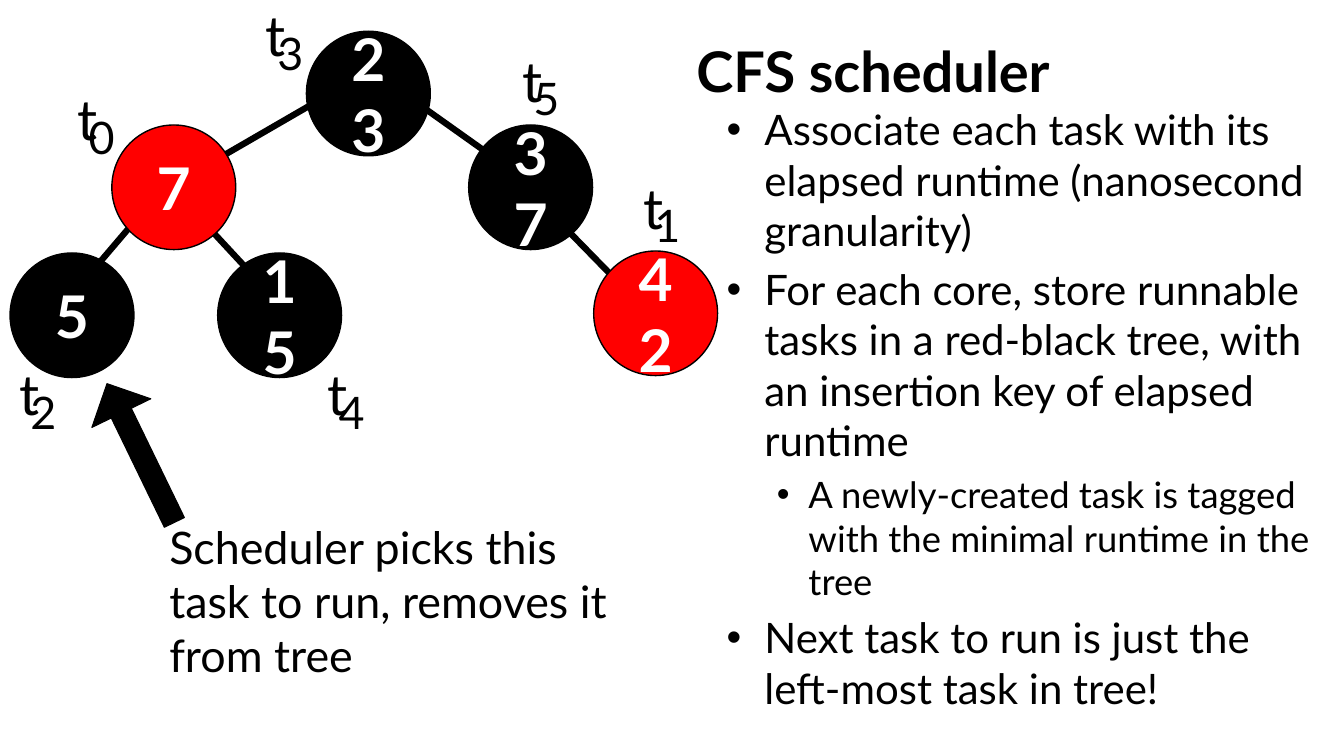
from dataclasses import dataclass

import lxml.etree
import pptx
import pptx.dml.color
import pptx.enum.shapes
import pptx.enum.text
import pptx.oxml.ns
import pptx.shapes.autoshape
import pptx.shapes.shapetree
import pptx.text.text
import pptx.util

Pt = pptx.util.Pt
RGB = pptx.dml.color.RGBColor
Align = pptx.enum.text.PP_ALIGN
AutoShape = pptx.enum.shapes.MSO_SHAPE
Shapes = pptx.shapes.shapetree.SlideShapes | pptx.shapes.shapetree.GroupShapes


@dataclass(frozen=True)
class Theme:
    font: str = "Lato"
    black: RGB = RGB(0x00, 0x00, 0x00)
    red: RGB = RGB(0xFF, 0x00, 0x00)
    white: RGB = RGB(0xFF, 0xFF, 0xFF)
    key_size: float = 42
    title_size: float = 40
    letter_size: float = 40
    note_size: float = 32
    subscript_size: float = 32
    bullet_sizes: tuple[float, float] = (30, 26)


@dataclass(frozen=True)
class Task:
    """A tree node; label_left and label_top place its name, t with a subscript."""
    number: int
    runtime: int
    colour: RGB
    left: float
    top: float
    label_left: float
    label_top: float


@dataclass(frozen=True)
class Edge:
    x1: float
    y1: float
    x2: float
    y2: float


@dataclass(frozen=True)
class Bullet:
    text: str
    level: int = 0


THEME = Theme()
NODE_WIDTH, NODE_HEIGHT = 88.5, 89
BULLET_INDENTS = ((27, -27), (58.5, -22.5))

TASKS = (
    Task(0, 7, THEME.red, 79.9, 89.3, 48.2, 56.9),
    Task(1, 42, THEME.red, 424.1, 179.3, 452.2, 120.2),
    Task(2, 5, THEME.black, 7.2, 180.7, 6.5, 253.4),
    Task(3, 23, THEME.black, 218.9, 22.3, 182.9, -2.9),
    Task(4, 15, THEME.black, 155.5, 180.7, 226.8, 253.4),
    Task(5, 37, THEME.black, 334.8, 89.3, 365.8, 29.5),
)
EDGES = (
    Edge(133.9, 126, 252, 57.6),
    Edge(288.7, 67, 375.8, 128.9),
    Edge(393.1, 151.9, 450, 210.2),
    Edge(51.8, 210.2, 101.5, 151.9),
    Edge(188.6, 205.2, 132.5, 144.7),
)
BULLETS = (
    Bullet("Associate each task with its elapsed runtime (nanosecond granularity)"),
    Bullet("For each core, store runnable tasks in a red-black tree, "
           "with an insertion key of elapsed runtime"),
    Bullet("A newly-created task is tagged with the minimal runtime in the tree", 1),
    Bullet("Next task to run is just the left-most task in tree!"),
)


def add_run(paragraph: pptx.text.text._Paragraph, text: str, size: float,
            colour: RGB = THEME.black, bold: bool = False) -> None:
    run = paragraph.add_run()
    run.text = text
    run.font.name = THEME.font
    run.font.size = Pt(size)
    run.font.bold = bold
    run.font.color.rgb = colour


def add_text(shapes: Shapes, left: float, top: float, width: float, height: float,
             text: str, size: float, bold: bool = False,
             align: Align = Align.LEFT) -> None:
    frame = shapes.add_textbox(Pt(left), Pt(top), Pt(width), Pt(height)).text_frame
    frame.word_wrap = True
    frame.auto_size = pptx.enum.text.MSO_AUTO_SIZE.SHAPE_TO_FIT_TEXT
    frame.paragraphs[0].alignment = align
    add_run(frame.paragraphs[0], text, size, bold=bold)


def add_filled(shapes: Shapes, preset: AutoShape, left: float, top: float, width: float,
               height: float, fill: RGB, outline: float) -> pptx.shapes.autoshape.Shape:
    shape = shapes.add_shape(preset, Pt(left), Pt(top), Pt(width), Pt(height))
    shape.shadow.inherit = False
    shape.fill.solid()
    shape.fill.fore_color.rgb = fill
    shape.line.color.rgb = THEME.black
    shape.line.width = Pt(outline)
    return shape


def add_edge(shapes: Shapes, edge: Edge) -> None:
    branch = shapes.add_connector(pptx.enum.shapes.MSO_CONNECTOR.STRAIGHT,
                                  Pt(edge.x1), Pt(edge.y1), Pt(edge.x2), Pt(edge.y2))
    branch.line.color.rgb = THEME.black
    branch.line.width = Pt(4.5)
    lxml.etree.SubElement(branch._element.spPr, pptx.oxml.ns.qn("a:effectLst"))


def add_node(shapes: Shapes, task: Task) -> None:
    node = add_filled(shapes, AutoShape.OVAL, task.left, task.top,
                      NODE_WIDTH, NODE_HEIGHT, task.colour, 1)
    frame = node.text_frame
    frame.word_wrap = True
    frame.vertical_anchor = pptx.enum.text.MSO_ANCHOR.MIDDLE
    frame.paragraphs[0].alignment = Align.CENTER
    add_run(frame.paragraphs[0], str(task.runtime), THEME.key_size, THEME.white, bold=True)


def add_label(shapes: Shapes, task: Task) -> None:
    label = shapes.add_group_shape().shapes
    add_text(label, task.label_left, task.label_top, 20.9, 55.4,
             "t", THEME.letter_size, align=Align.CENTER)
    add_text(label, task.label_left - 4, task.label_top + 17.7, 56.9, 46.1,
             str(task.number), THEME.subscript_size, align=Align.CENTER)


def add_bullets(shapes: Shapes) -> None:
    frame = shapes.add_textbox(Pt(511.9), Pt(70.6), Pt(447.8), Pt(469.4)).text_frame
    frame.word_wrap = True
    for index, bullet in enumerate(BULLETS):
        paragraph = frame.add_paragraph() if index else frame.paragraphs[0]
        size = THEME.bullet_sizes[bullet.level]
        margin, indent = BULLET_INDENTS[bullet.level]
        paragraph.level = bullet.level
        paragraph.space_before = Pt(0.2 * size)
        properties = paragraph._p.get_or_add_pPr()
        properties.set("marL", str(Pt(margin)))
        properties.set("indent", str(Pt(indent)))
        for tag, key, value in (("a:buFont", "typeface", "Arial"),
                                ("a:buChar", "char", "•")):
            lxml.etree.SubElement(properties, pptx.oxml.ns.qn(tag)).set(key, value)
        add_run(paragraph, bullet.text, size)


def add_pick_note(shapes: Shapes) -> None:
    """Point from the explanation to the left-most task."""
    note = shapes.add_group_shape().shapes
    arrow = add_filled(note, AutoShape.RIGHT_ARROW, 45.4, 300.2, 110.2, 46.8,
                       THEME.black, 0.75)
    arrow.adjustments[0] = 0.34
    arrow.adjustments[1] = 0.5
    arrow.rotation = 244.1
    add_text(note, 113.8, 367.9, 337.7, 123.8,
             "Scheduler picks this task to run, removes it from tree", THEME.note_size)


def main() -> None:
    deck = pptx.Presentation()
    deck.slide_width, deck.slide_height = Pt(960), Pt(540)
    shapes = deck.slides.add_slide(deck.slide_layouts[6]).shapes

    tree = shapes.add_group_shape().shapes
    for edge in EDGES:
        add_edge(tree, edge)
    for task in TASKS:
        add_node(tree, task)

    add_text(shapes, 490.3, 22.3, 308.2, 55.4, "CFS scheduler", THEME.title_size, bold=True)
    add_pick_note(shapes)
    add_bullets(shapes)
    for task in TASKS:
        add_label(shapes, task)
    deck.save("out.pptx")


if __name__ == "__main__":
    main()
